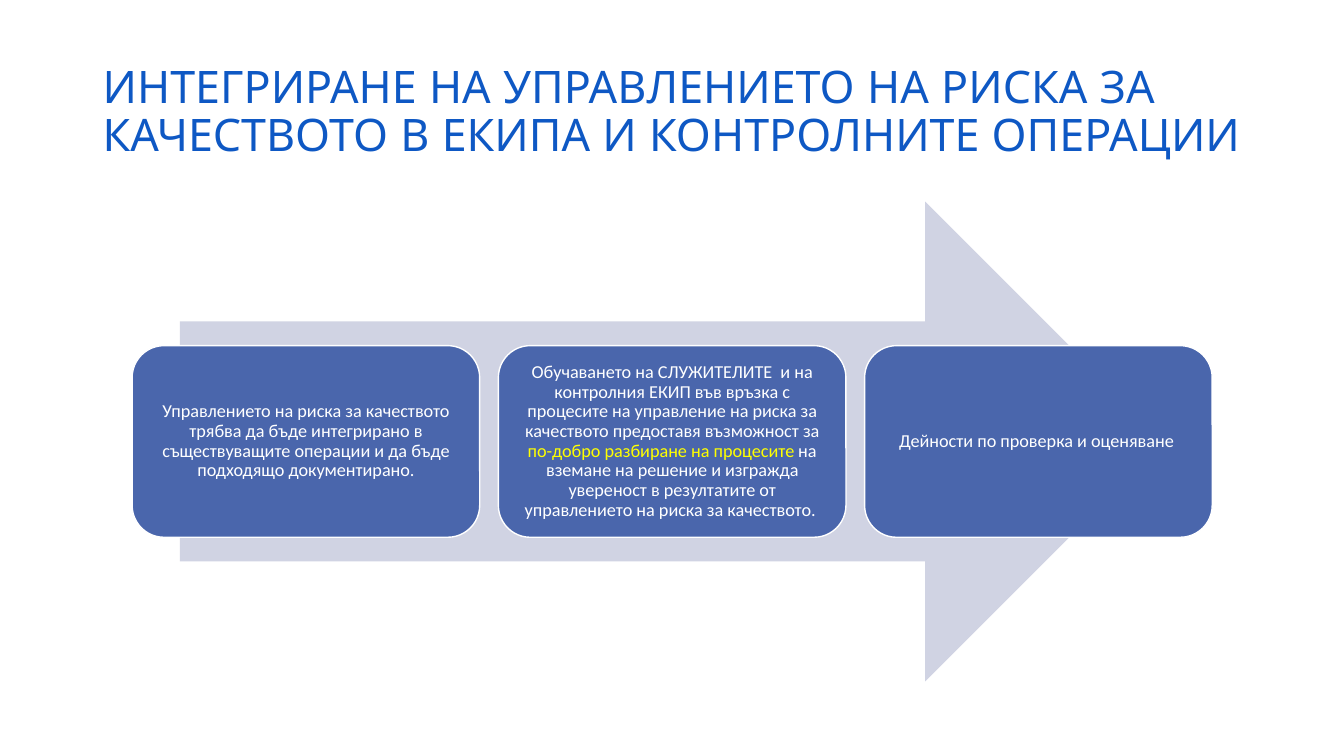
import pptx
import pptx.dml.color
import pptx.enum.shapes
import pptx.enum.text
import pptx.util

Cm = pptx.util.Cm
Pt = pptx.util.Pt
RGBColor = pptx.dml.color.RGBColor
MSO_SHAPE = pptx.enum.shapes.MSO_SHAPE
MSO_ANCHOR = pptx.enum.text.MSO_ANCHOR
PP_ALIGN = pptx.enum.text.PP_ALIGN

TITLE_BLUE = RGBColor(0x0E, 0x58, 0xC4)
ARROW_GREY = RGBColor(0xD0, 0xD3, 0xE3)
STEP_BLUE = RGBColor(0x4A, 0x66, 0xAC)
WHITE = RGBColor(0xFF, 0xFF, 0xFF)
YELLOW = RGBColor(0xFF, 0xFF, 0x00)

# Content: each step is a list of (text, colour) pieces
TITLE = ("ИНТЕГРИРАНЕ НА УПРАВЛЕНИЕТО НА РИСКА ЗА КАЧЕСТВОТО "
         "В ЕКИПА И КОНТРОЛНИТЕ ОПЕРАЦИИ")
STEPS = [
    [("Управлението на риска за качеството трябва да бъде интегрирано в "
      "съществуващите операции и да бъде подходящо документирано.", WHITE)],
    [("Обучаването на СЛУЖИТЕЛИТЕ  и на контролния ЕКИП във връзка с "
      "процесите на управление на риска за качеството предоставя "
      "възможност за ", WHITE),
     ("по-добро разбиране на процесите ", YELLOW),
     ("на вземане на решение и изгражда увереност в резултатите от "
      "управлението на риска за качеството. ", WHITE)],
    [("Дейности по проверка и оценяване ", WHITE)],
]

# Layout
CONTENT_LEFT, CONTENT_WIDTH = Cm(2.34), Cm(29.21)
ARROW_TOP, ARROW_HEIGHT = Cm(5.08), Cm(12.09)
ARROW_WIDTH = int(CONTENT_WIDTH * 0.85)
STEP_LEFT, STEP_WIDTH, STEP_HEIGHT, STEP_GAP = Cm(3.33), Cm(8.76), Cm(4.83), Cm(0.47)
STEP_INSET = Cm(0.13)

deck = pptx.Presentation()
deck.slide_width, deck.slide_height = Cm(33.87), Cm(19.05)
slide = deck.slides.add_slide(deck.slide_layouts[6])


def style_run(run, font_name, size, colour):
    run.font.name = font_name
    run.font.size = Pt(size)
    run.font.color.rgb = colour


# Title
title = slide.shapes.add_textbox(CONTENT_LEFT, Cm(1.01), CONTENT_WIDTH, Cm(3.68))
title.text_frame.word_wrap = True
title.text_frame.vertical_anchor = MSO_ANCHOR.MIDDLE
title.text_frame.text = TITLE
heading = title.text_frame.paragraphs[0]
heading.line_spacing = 0.9
style_run(heading.runs[0], "Quicksand", 32, TITLE_BLUE)

# Arrow behind the steps
arrow = slide.shapes.add_shape(
    MSO_SHAPE.RIGHT_ARROW, CONTENT_LEFT + (CONTENT_WIDTH - ARROW_WIDTH) // 2,
    ARROW_TOP, ARROW_WIDTH, ARROW_HEIGHT)
arrow.shadow.inherit = False
arrow.fill.solid()
arrow.fill.fore_color.rgb = ARROW_GREY
arrow.line.fill.background()

# Steps, centred on the arrow
step_top = ARROW_TOP + (ARROW_HEIGHT - STEP_HEIGHT) // 2
for index, pieces in enumerate(STEPS):
    step = slide.shapes.add_shape(
        MSO_SHAPE.ROUNDED_RECTANGLE, STEP_LEFT + index * (STEP_WIDTH + STEP_GAP),
        step_top, STEP_WIDTH, STEP_HEIGHT)
    step.shadow.inherit = False
    step.fill.solid()
    step.fill.fore_color.rgb = STEP_BLUE
    step.line.color.rgb = WHITE
    step.line.width = Pt(1)

    frame = step.text_frame
    frame.word_wrap = True
    frame.vertical_anchor = MSO_ANCHOR.MIDDLE
    frame.margin_left = frame.margin_right = STEP_INSET
    frame.margin_top = frame.margin_bottom = STEP_INSET
    paragraph = frame.paragraphs[0]
    paragraph.alignment = PP_ALIGN.CENTER
    paragraph.line_spacing = 0.9
    for text, colour in pieces:
        run = paragraph.add_run()
        run.text = text
        style_run(run, "Calibri", 13, colour)

deck.save("out.pptx")
